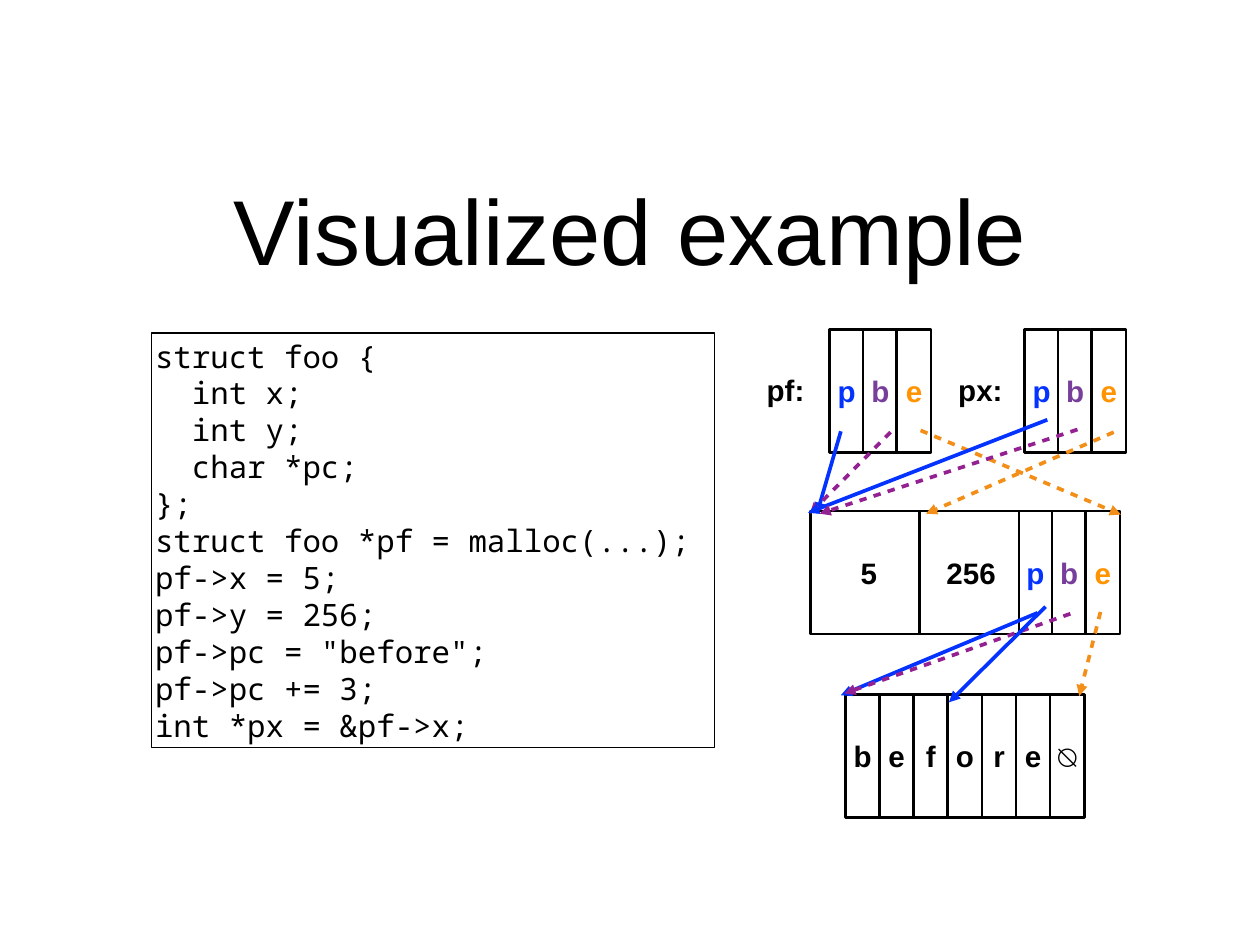
import pptx
import pptx.dml.color
import pptx.enum.dml
import pptx.enum.shapes
import pptx.enum.text
import pptx.oxml
import pptx.oxml.ns
import pptx.util
from dataclasses import dataclass

Inches = pptx.util.Inches
Pt = pptx.util.Pt
Align = pptx.enum.text.PP_ALIGN


@dataclass(frozen=True)
class Theme:
    ink: str = "000000"
    paper: str = "FFFFFF"
    pointer: str = "0433FF"
    base: str = "773F9B"
    end: str = "FF9300"
    base_arrow: str = "942192"
    end_arrow: str = "F38F18"
    font: str = "Arial"
    code_font: str = "Noto Sans Mono"
    symbol_font: str = "Calibri"
    title_size: float = 74.9
    code_size: float = 25
    code_pitch: float = 30
    label_size: float = 24
    cell_line: float = 2
    arrow_line: float = 3


CODE = """struct foo {
  int x;
  int y;
  char *pc;
};
struct foo *pf = malloc(...);
pf->x = 5;
pf->y = 256;
pf->pc = "before";
pf->pc += 3;
int *px = &pf->x;"""

CELL_WIDTH, CELL_HEIGHT = 0.39, 1.39
VALUE_WIDTH = 1.23
POINTER_ROW, STRUCT_ROW, STRING_ROW = 3.72, 5.77, 7.84


def rgb(color):
    return pptx.dml.color.RGBColor.from_string(color)


def write_text(frame, text, *, font, size, color, bold=False, align=Align.CENTER,
               inset=0.06, wrap=True, pitch=None):
    """Fill a text frame, one paragraph a line; pitch is a fixed line height in points."""
    frame.word_wrap = wrap
    frame.vertical_anchor = pptx.enum.text.MSO_ANCHOR.MIDDLE
    frame.margin_left = frame.margin_right = Inches(inset)
    frame.margin_top = frame.margin_bottom = Inches(inset)
    for index, line in enumerate(text.split("\n")):
        paragraph = frame.add_paragraph() if index else frame.paragraphs[0]
        paragraph.alignment = align
        if pitch:
            paragraph.line_spacing = Pt(pitch)
        run = paragraph.add_run()
        run.text = line
        run.font.name = font
        run.font.size = Pt(size)
        run.font.bold = bold
        run.font.color.rgb = rgb(color)


class SlideBuilder:
    def __init__(self, slide, theme):
        self.shapes = slide.shapes
        self.theme = theme

    def label(self, left, top, width, height, text, **text_format):
        style = dict(font=self.theme.font, size=self.theme.label_size,
                     color=self.theme.ink, bold=True, wrap=False)
        box = self.shapes.add_textbox(Inches(left), Inches(top), Inches(width), Inches(height))
        write_text(box.text_frame, text, **(style | text_format))

    def rectangle(self, left, top, width, height, line_width):
        box = self.shapes.add_shape(pptx.enum.shapes.MSO_SHAPE.RECTANGLE, Inches(left),
                                    Inches(top), Inches(width), Inches(height))
        box.shadow.inherit = False
        box.fill.solid()
        box.fill.fore_color.rgb = rgb(self.theme.paper)
        box.line.color.rgb = rgb(self.theme.ink)
        box.line.width = Pt(line_width)
        return box

    def code(self, left, top, width, height, text):
        box = self.rectangle(left, top, width, height, 1)
        write_text(box.text_frame, text, font=self.theme.code_font, size=self.theme.code_size,
                   color=self.theme.ink, align=Align.LEFT, inset=0.04,
                   pitch=self.theme.code_pitch)

    def cell(self, left, top, text, **text_format):
        style = dict(font=self.theme.font, size=self.theme.label_size,
                     color=self.theme.ink, bold=True)
        box = self.rectangle(left, top, CELL_WIDTH, CELL_HEIGHT, self.theme.cell_line)
        write_text(box.text_frame, text, **(style | text_format))

    def fat_pointer(self, left, top):
        """Three cells: pointer, base and end."""
        colors = (self.theme.pointer, self.theme.base, self.theme.end)
        for index, (letter, color) in enumerate(zip("pbe", colors)):
            self.cell(left + 0.38 * index, top, letter, color=color)

    def arrow(self, start, finish, color, dashed):
        arrow = self.shapes.add_connector(pptx.enum.shapes.MSO_CONNECTOR.STRAIGHT,
                                          *map(Inches, start + finish))
        arrow.line.color.rgb = rgb(color)
        arrow.line.width = Pt(self.theme.arrow_line)
        namespace = pptx.oxml.ns.nsdecls("a")
        outline = arrow.line._get_or_add_ln()
        if dashed:
            outline.append(pptx.oxml.parse_xml(
                f'<a:custDash {namespace}><a:ds d="200000" sp="200000"/></a:custDash>'))
        outline.append(pptx.oxml.parse_xml(f'<a:tailEnd {namespace} type="triangle"/>'))
        arrow._element.spPr.append(pptx.oxml.parse_xml(f"<a:effectLst {namespace}/>"))


def main():
    theme = Theme()
    deck = pptx.Presentation()
    deck.slide_width, deck.slide_height = Inches(14.22), Inches(10.67)
    builder = SlideBuilder(deck.slides.add_slide(deck.slide_layouts[6]), theme)

    builder.label(2.56, 1.7, 9.1, 1.77, "Visualized example", size=theme.title_size,
                  bold=False, inset=0.04, wrap=True)
    builder.code(1.71, 3.76, 6.35, 4.68, CODE)

    for left, top in ((9.36, POINTER_ROW), (11.56, POINTER_ROW), (11.49, STRUCT_ROW)):
        builder.fat_pointer(left, top)
    for left in (10.27, 9.15):
        builder.rectangle(left, STRUCT_ROW, VALUE_WIDTH, CELL_HEIGHT, theme.cell_line)
    for text, left, top, width in (("pf:", 8.59, 4.15, 0.55), ("px:", 10.75, 4.15, 0.63),
                                   ("5", 9.65, 6.21, 0.31), ("256", 10.62, 6.21, 0.68)):
        builder.label(left, top, width, 0.51, text)

    terminator = dict(font=theme.symbol_font, size=theme.code_size, bold=False)
    for index, letter in enumerate("before⍉"):
        builder.cell(9.54 + 0.385 * index, STRING_ROW, letter,
                     **(terminator if letter == "⍉" else {}))

    pointer, base, end = theme.pointer, theme.base_arrow, theme.end_arrow
    for start, finish, color in (
        ((9.49, 4.87), (9.22, 5.8), pointer),
        ((10.05, 4.88), (9.14, 5.8), base),
        ((10.39, 4.86), (12.65, 5.81), end),
        ((11.71, 6.92), (9.49, 7.85), pointer),
        ((12.08, 6.93), (9.53, 7.83), base),
        ((12.42, 6.91), (12.18, 7.86), end),
        ((11.8, 6.85), (10.71, 7.93), pointer),
        ((11.82, 4.74), (9.12, 5.79), pointer),
        ((12.16, 4.85), (9.25, 5.8), base),
        ((12.57, 4.88), (10.45, 5.8), end),
    ):
        builder.arrow(start, finish, color, dashed=color != pointer)

    deck.save("out.pptx")


if __name__ == "__main__":
    main()
